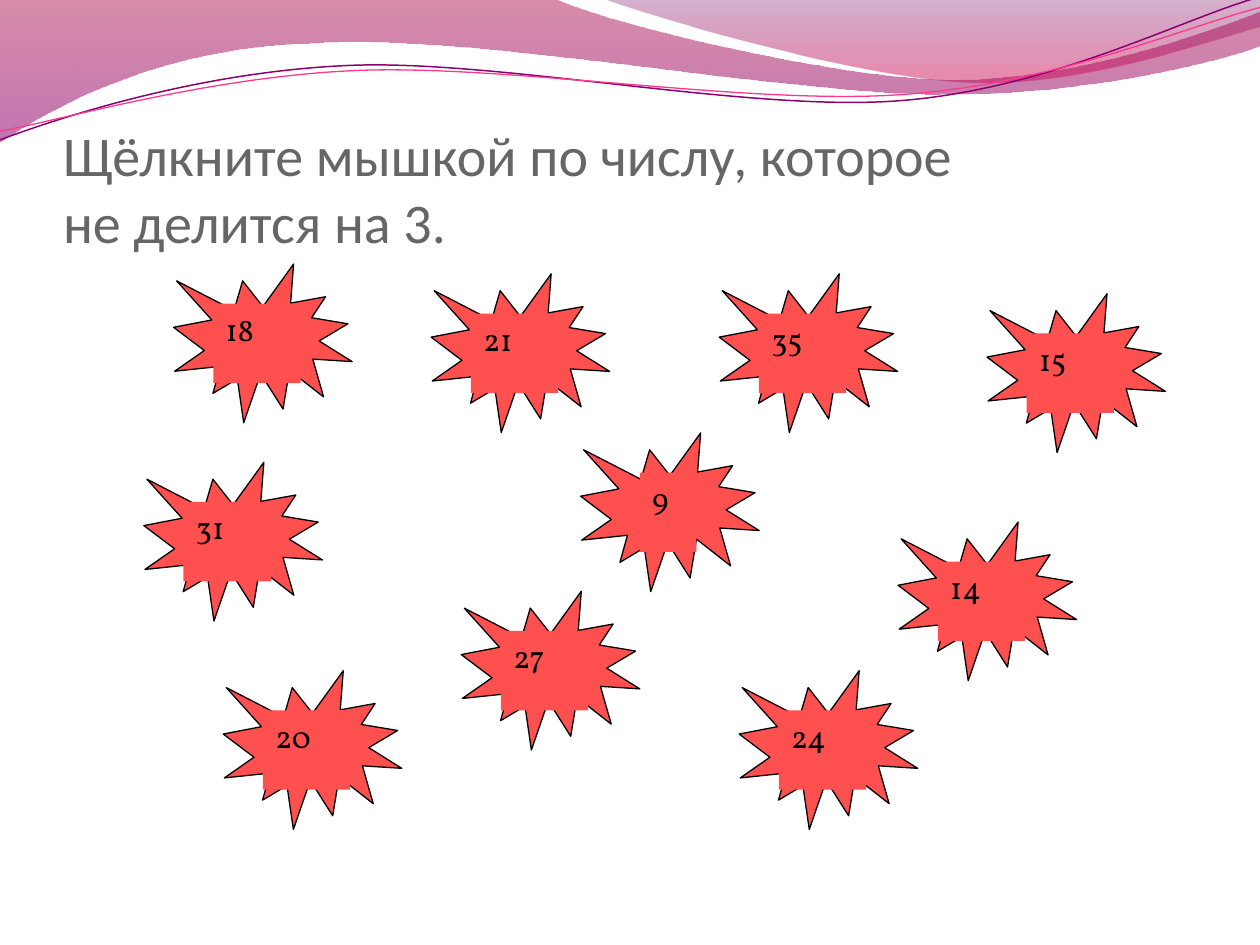
from math import cos, radians, sin

from lxml.etree import SubElement
from pptx import Presentation
from pptx.dml.color import RGBColor
from pptx.enum.shapes import MSO_SHAPE
from pptx.enum.text import MSO_ANCHOR, PP_ALIGN
from pptx.oxml.ns import qn
from pptx.util import Pt

TITLE = "Щёлкните мышкой по числу, которое \vне делится на 3."
NUMBERS = [
    ("18", 99.2, 150.9), ("21", 246.4, 156.5), ("35", 411, 156.5),
    ("15", 564, 167.9), ("14", 513.2, 298.3), ("24", 422.4, 383.3),
    ("31", 82.2, 264.2), ("27", 263.6, 337.9), ("20", 127.6, 383.3),
    ("9", 331.8, 247.4),
]
SEAL_W, SEAL_H = 102.05, 90.7
LABEL_H, LABEL_TOP = 45.35, 22.68
LABELS = {1: (33.8, 32.4), 2: (22.68, 49.9)}

BANDS = [
    {"path": [(0, 0), (317, -0.7),
              (343, 12.2, 478, 45.4, 546, 45.4), (614, 45.4, 690, 18.7, 720, 6.5),
              (720.7, 26), (708, 31.7, 626, 54.7, 537, 54),
              (448, 54, 275, 20.2, 185, 24.5), (93, 26, 33, 59.8, -0.7, 81.4), (0, 0)],
     "stops": [(0, "A90042", 45), (1, "8E0073", 55)]},
    {"path": [(345, -0.7), (366, 7.9, 491, 44.6, 554, 46.8),
              (616, 49.7, 692, 23, 720, 15.1), (720, 0), (345, -0.7)],
     "stops": [(0, "73005E", 30), (0.8, "C9004F", 45)]},
]
WAVES = [
    {"path": [(0, 79.9), (34.6, 67, 113.8, 41, 199.4, 37.4),
              (284.4, 33.8, 427, 64.1, 513.4, 57.6), (599.8, 51.1, 675.4, 10.8, 718.6, -1.4)],
     "center": (359.3, 41.4), "color": "8A0070", "width": 0.85},
    {"path": [(0, 74.9), (33.8, 69.1, 118.1, 43.9, 203.8, 40.3),
              (290.2, 36.7, 429.8, 60.5, 516.2, 54), (601.9, 48.2, 677.5, 15.1, 720, 4.3)],
     "center": (359.6, 42.5), "color": "FF388C", "width": 0.75},
]
WAVE_TILT = -2.7


def rgb(value):
    return RGBColor.from_string(value)


def turn(seg, center, angle):
    cx, cy = center
    c, n = cos(radians(angle)), sin(radians(angle))
    turned = []
    for x, y in zip(seg[::2], seg[1::2]):
        turned += [cx + (x - cx) * c - (y - cy) * n, cy + (x - cx) * n + (y - cy) * c]
    return tuple(turned)


def add_curve(shapes, path, close):
    points = [(Pt(x), Pt(y)) for seg in path for x, y in zip(seg[::2], seg[1::2])]
    builder = shapes.build_freeform(*points[0])
    builder.add_line_segments(points[1:], close=close)
    sp = builder.convert_to_shape()
    sp.shadow.inherit = False
    lines = iter(list(sp.element.spPr.iter(qn("a:lnTo"))))
    for seg in path[1:]:
        first = next(lines)
        if len(seg) == 6:
            outline = first.getparent()
            curve = SubElement(outline, qn("a:cubicBezTo"))
            first.addprevious(curve)
            for line in (first, next(lines), next(lines)):
                curve.append(line[0])
                outline.remove(line)
    return sp


def add_band(shapes, path, stops):
    sp = add_curve(shapes, path, True)
    sp.line.fill.background()
    sp.fill.gradient()
    sp.fill.gradient_angle = 270
    for stop, (position, color, _) in zip(sp.fill.gradient_stops, stops):
        stop.position = position
        stop.color.rgb = rgb(color)
    for clr, (_, _, opacity) in zip(sp.element.spPr.iter(qn("a:srgbClr")), stops):
        SubElement(clr, qn("a:alpha"), val=str(opacity * 1000))


def add_wave(shapes, path, center, color, width):
    sp = add_curve(shapes, [turn(seg, center, -WAVE_TILT) for seg in path], False)
    sp.rotation = WAVE_TILT
    sp.fill.background()
    sp.line.color.rgb = rgb(color)
    sp.line.width = Pt(width)


def add_block(shapes, kind, box, fill, line=None):
    sp = shapes.add_shape(kind, *map(Pt, box))
    sp.shadow.inherit = False
    sp.fill.solid()
    sp.fill.fore_color.rgb = rgb(fill)
    if line:
        sp.line.color.rgb = rgb(line)
        sp.line.width = Pt(0.75)
    else:
        sp.line.fill.background()
    return sp


def write(sp, text, font, size, color, anchor=MSO_ANCHOR.TOP, wrap=False,
          insets=(7.2, 3.6, 7.2, 3.6)):
    tf = sp.text_frame
    tf.word_wrap = wrap
    tf.vertical_anchor = anchor
    tf.margin_left, tf.margin_top, tf.margin_right, tf.margin_bottom = map(Pt, insets)
    p = tf.paragraphs[0]
    p.text = text
    p.alignment = PP_ALIGN.LEFT
    for r in p.runs:
        r.font.name = font
        r.font.size = Pt(size)
        r.font.color.rgb = rgb(color)


def add_number(shapes, text, left, top):
    group = shapes.add_group_shape().shapes
    add_block(group, MSO_SHAPE.EXPLOSION1, (left, top, SEAL_W, SEAL_H), "FF5050", "000000")
    offset, width = LABELS[len(text)]
    label = add_block(group, MSO_SHAPE.RECTANGLE,
                      (left + offset, top + LABEL_TOP, width, LABEL_H), "FF5050")
    write(label, text, font="Vollkorn", size=18, color="000000")


def main():
    prs = Presentation()
    prs.slide_width, prs.slide_height = Pt(720), Pt(540)
    s = prs.slides.add_slide(prs.slide_layouts[6])
    for band in BANDS:
        add_band(s.shapes, **band)
    for wave in WAVES:
        add_wave(s.shapes, **wave)
    title = s.shapes.add_textbox(Pt(36), Pt(55.4), Pt(653.8), Pt(90))
    write(title, TITLE, font="Calibri", size=32, color="666666",
          anchor=MSO_ANCHOR.BOTTOM, wrap=True, insets=(0, 3.6, 0, 0))
    for number in NUMBERS:
        add_number(s.shapes, *number)
    prs.save("out.pptx")


if __name__ == "__main__":
    main()
